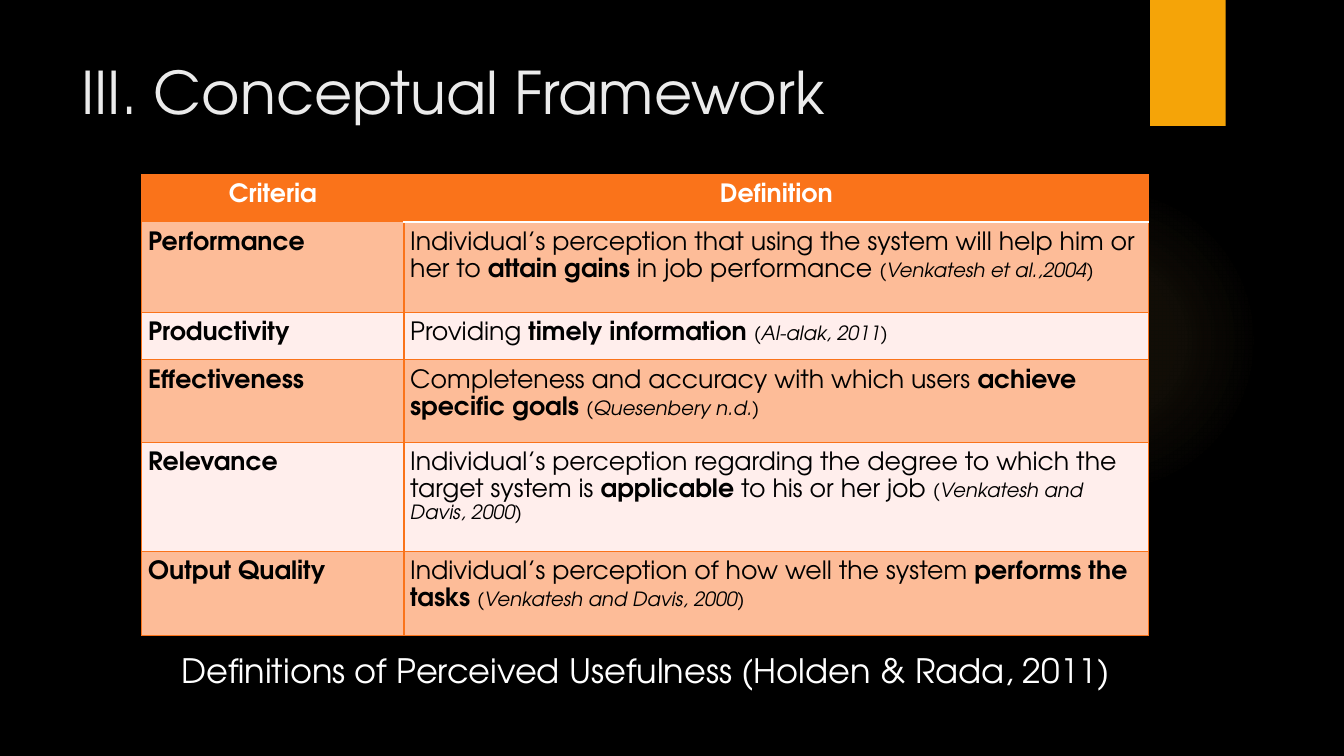
from dataclasses import dataclass
from lxml.etree import SubElement
from pptx import Presentation
from pptx.dml.color import RGBColor
from pptx.enum.shapes import MSO_SHAPE as Shape
from pptx.enum.text import MSO_ANCHOR as Anchor, PP_ALIGN as Align
from pptx.oxml.ns import qn
from pptx.util import Pt

# Content: definitions are (text before, key phrase, text after, citation)
TITLE = "III. Conceptual Framework"
HEADINGS = ("Criteria", "Definition")
CRITERIA = [
    ("Performance", (
        "Individual’s perception that using the system will help him or her to ",
        "attain gains", " in job performance ", "(Venkatesh et al.,2004)")),
    ("Productivity", (
        "Providing ", "timely information ", "", "(Al-alak, 2011)")),
    ("Effectiveness", (
        "Completeness and accuracy with which users ",
        "achieve specific goals ", "", "(Quesenbery n.d.)")),
    ("Relevance", (
        "Individual’s perception regarding the degree to which the target system is ",
        "applicable", " to his or her job ", "(Venkatesh and Davis, 2000)")),
    ("Output Quality", (
        "Individual’s perception of how well the system ",
        "performs the tasks ", "", "(Venkatesh and Davis, 2000)")),
]
CAPTION = "Definitions of Perceived Usefulness (Holden & Rada, 2011)"


@dataclass(frozen=True)
class Theme:
    font: str = "TeX Gyre Adventor"
    background: str = "000000"
    title: str = "EBEBEB"
    white: str = "FFFFFF"
    black: str = "000000"
    gold: str = "F5A408"
    glow: str = "FAC96A"
    orange: str = "FA731A"
    peach: str = "FDBC98"
    pale: str = "FFEEEC"
    title_size: int = 42
    caption_size: int = 24
    cell_size: int = 18
    citation_size: int = 14
    thin: float = 0.75
    thick: float = 1.5


THEME = Theme()

# Geometry in points: left, top, width, height
GLOW_AT = (677.5, 131.8, 221.8, 221.8)
TAB_AT = (821.5, 0, 54, 90)
TITLE_AT = (51.1, 36, 740.9, 110.2)
TABLE_AT = (101.3, 124.6, 719.3, 309.7)
CAPTION_AT = (115.9, 460.8, 690.5, 36)
COLUMN_WIDTHS = (187.2, 532.1)
ROW_HEIGHTS = (31.7, 64.8, 31.7, 57.6, 63.4, 60.5)
CELL_MARGIN = 4.5
GLOW_STOPS = ((0, 7), (36, 6), (69, 0))  # position and opacity, percent


def points(values):
    return [Pt(value) for value in values]


def style_font(target, size, color, bold=None):
    font = target.font
    font.name, font.size, font.bold = THEME.font, Pt(size), bold
    font.color.rgb = RGBColor.from_string(color)


def add_block(page, kind, at):
    block = page.shapes.add_shape(kind, *points(at))
    block.shadow.inherit = False
    block.line.fill.background()
    return block


def add_text(page, at, text, size, color, align):
    box = page.shapes.add_textbox(*points(at))
    box.text_frame.word_wrap = True
    box.text_frame.vertical_anchor = Anchor.TOP
    para = box.text_frame.paragraphs[0]
    para.text, para.alignment = text, align
    style_font(para, size, color)


def fill_with_glow(block):
    block.fill.gradient()
    gradient = block.fill._xPr.find(qn("a:gradFill"))
    for child in list(gradient):
        gradient.remove(child)
    stops = SubElement(gradient, qn("a:gsLst"))
    for position, opacity in GLOW_STOPS:
        stop = SubElement(stops, qn("a:gs"), pos=str(position * 1000))
        color = SubElement(stop, qn("a:srgbClr"), val=THEME.glow)
        SubElement(color, qn("a:alpha"), val=str(opacity * 1000))
    shade = SubElement(gradient, qn("a:path"), path="circle")
    SubElement(shade, qn("a:fillToRect"), l="50000", t="50000", r="50000", b="50000")


def draw_borders(cell, row, column):
    edges = {side: (THEME.orange, THEME.thin) for side in "LRTB"}
    edges["R" if column == 0 else "L"] = (THEME.orange, THEME.thick)
    if column == 1 and row < 2:  # white rule below the Definition heading
        edges["B" if row == 0 else "T"] = (THEME.white, THEME.thick)
    properties = cell._tc.get_or_add_tcPr()
    for side, (color, width) in edges.items():
        line = SubElement(properties, qn("a:ln" + side), w=str(Pt(width)))
        fill = SubElement(line, qn("a:solidFill"))
        SubElement(fill, qn("a:srgbClr"), val=color)


def prepare_cell(cell, row, column):
    cell.margin_left = cell.margin_right = Pt(CELL_MARGIN)
    cell.margin_top = cell.margin_bottom = Pt(CELL_MARGIN)
    cell.vertical_anchor = Anchor.TOP
    draw_borders(cell, row, column)
    body_fill = THEME.peach if row % 2 else THEME.pale
    cell.fill.solid()
    cell.fill.fore_color.rgb = RGBColor.from_string(body_fill if row else THEME.orange)
    para = cell.text_frame.paragraphs[0]
    para.line_spacing = 1.15
    return para


def write_definition(para, parts):
    before, key, after, citation = parts
    for text, bold in ((before, False), (key, True), (after, False)):
        if text:
            span = para.add_run()
            span.text = text
            style_font(span, THEME.cell_size, THEME.black, bold)
    span = para.add_run()
    span.text = citation
    style_font(span, THEME.citation_size, THEME.black, False)
    span.font.italic = True


def add_criteria_table(page):
    rows = [HEADINGS, *CRITERIA]
    table = page.shapes.add_table(len(rows), len(HEADINGS), *points(TABLE_AT)).table
    for column, width in zip(table.columns, COLUMN_WIDTHS):
        column.width = Pt(width)
    for row, height in zip(table.rows, ROW_HEIGHTS):
        row.height = Pt(height)
    for row, values in enumerate(rows):
        for column, value in enumerate(values):
            para = prepare_cell(table.cell(row, column), row, column)
            if row and column:
                write_definition(para, value)
                continue
            para.text = value
            para.alignment = Align.JUSTIFY if row else Align.CENTER
            style_font(para, THEME.cell_size, THEME.black if row else THEME.white, True)


def main():
    deck = Presentation()
    deck.slide_width, deck.slide_height = Pt(960), Pt(540)
    page = deck.slides.add_slide(deck.slide_layouts[6])
    page.background.fill.solid()
    page.background.fill.fore_color.rgb = RGBColor.from_string(THEME.background)

    # Decoration
    fill_with_glow(add_block(page, Shape.OVAL, GLOW_AT))
    tab = add_block(page, Shape.RECTANGLE, TAB_AT)
    tab.fill.solid()
    tab.fill.fore_color.rgb = RGBColor.from_string(THEME.gold)

    # Title, table and caption
    add_text(page, TITLE_AT, TITLE, THEME.title_size, THEME.title, Align.LEFT)
    add_criteria_table(page)
    add_text(page, CAPTION_AT, CAPTION, THEME.caption_size, THEME.white, Align.CENTER)

    deck.save("out.pptx")


if __name__ == "__main__":
    main()
